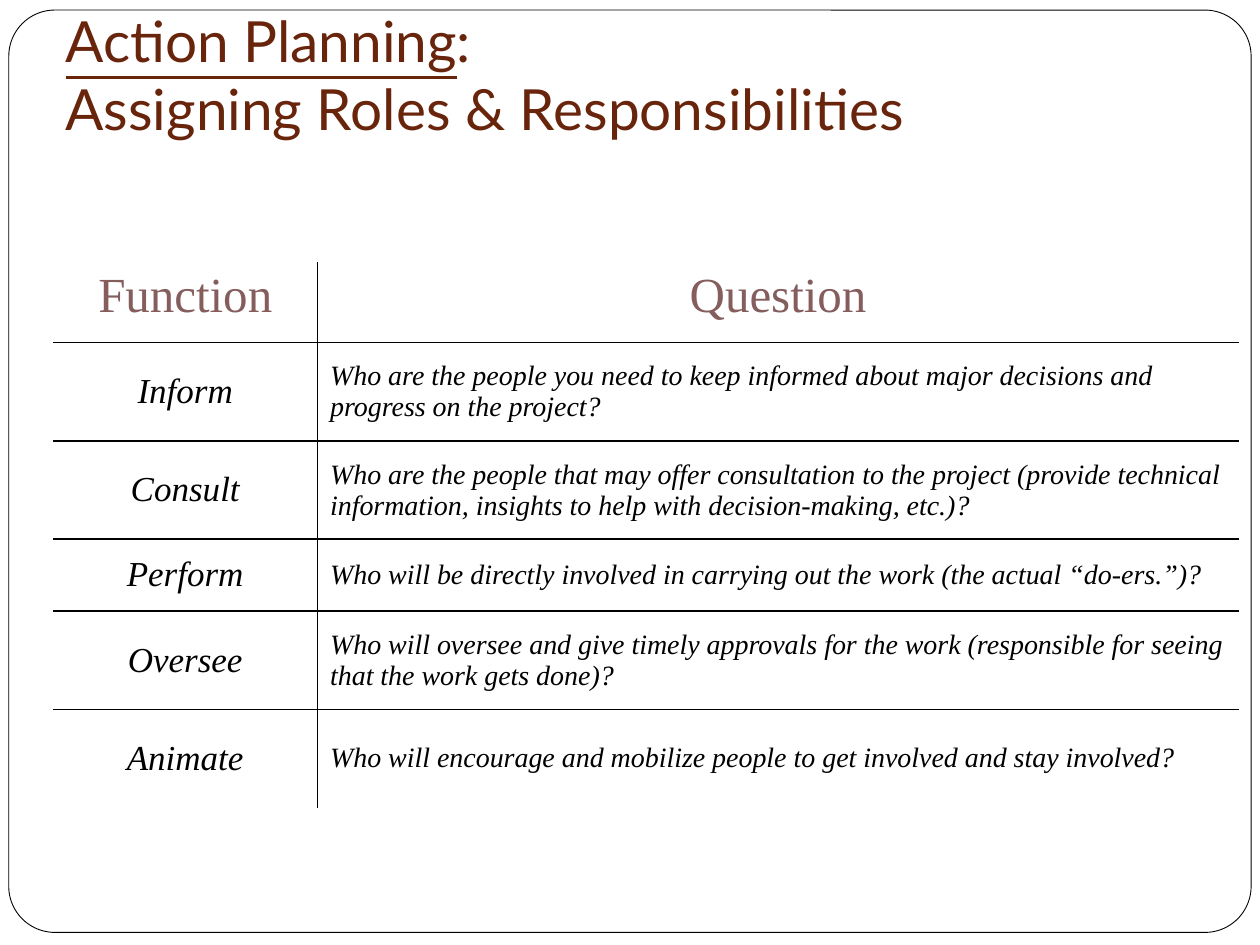
from lxml import etree
from pptx import Presentation
from pptx import util as u
from pptx.dml.color import RGBColor
from pptx.enum import shapes, text
from pptx.oxml import parse_xml
from pptx.oxml.ns import nsdecls, qn

BLACK = RGBColor(0x00, 0x00, 0x00)
WHITE = RGBColor(0xFF, 0xFF, 0xFF)
BROWN = RGBColor(0x69, 0x24, 0x0C)
MAUVE = RGBColor(0x85, 0x5D, 0x5D)
SERIF = "Times New Roman"
PLAIN_TABLE_STYLE = "{2D5ABB26-0587-4C30-8999-92F81FD0307C}"

COLUMN_WIDTHS = (2.1, 7.31)
ROW_HEIGHTS = (0.64, 0.78, 0.78, 0.57, 0.78, 0.78)
HEADINGS = ("Function", "Question")
ROLES = (
    ("Inform", "Who are the people you need to keep informed about major decisions "
               "and progress on the project?"),
    ("Consult", "Who are the people that may offer consultation to the project "
                "(provide technical information, insights to help with "
                "decision-making, etc.)?"),
    ("Perform", "Who will be directly involved in carrying out the work "
                "(the actual “do-ers.”)?"),
    ("Oversee", "Who will oversee and give timely approvals for the work "
                "(responsible for seeing that the work gets done)?"),
    ("Animate", "Who will encourage and mobilize people to get involved and stay involved?"),
)


def add_span(para, words, font=SERIF, size=16, color=BLACK, italic=False, underline=False):
    """Add a formatted run to a paragraph."""
    span = para.add_run()
    span.text = words
    span.font.name = font
    span.font.size = u.Pt(size)
    span.font.color.rgb = color
    span.font.bold = False
    span.font.italic = italic
    span.font.underline = underline


def add_frame(page):
    """Draw the rounded page frame behind everything else."""
    frame = page.shapes.add_shape(
        shapes.MSO_SHAPE.ROUNDED_RECTANGLE,
        u.Inches(0.07), u.Inches(0.08), u.Inches(9.86), u.Inches(7.32))
    frame.adjustments[0] = 0.05
    frame.shadow.inherit = False
    frame.fill.solid()
    frame.fill.fore_color.rgb = WHITE
    frame.line.color.rgb = BLACK
    frame.line.width = u.Pt(0.5)
    page.shapes.element.insert(2, frame.element)


def fill_title(page):
    """Place and write the two-line title."""
    title = page.shapes.title
    title.left, title.top = u.Inches(0.42), u.Inches(0.94)
    title.width, title.height = u.Inches(9.46), u.Inches(0.83)
    box = title.text_frame
    box.auto_size = text.MSO_AUTO_SIZE.NONE
    box.word_wrap = True
    box.vertical_anchor = text.MSO_ANCHOR.BOTTOM
    box.margin_bottom = u.Inches(0.64)
    para = box.paragraphs[0]
    para.alignment = text.PP_ALIGN.LEFT
    style = dict(font="Lato", size=32.4, color=BROWN)
    add_span(para, "Action Planning", underline=True, **style)
    add_span(para, ":", **style)
    para.add_line_break()
    add_span(para, "Assigning Roles & Responsibilities", **style)


def add_border(cell, side):
    """Draw a thin black border on one side (L, R, T or B) of a cell."""
    border = parse_xml(f'<a:ln{side} {nsdecls("a")} w="{u.Pt(1)}"/>')
    fill = etree.SubElement(border, qn("a:solidFill"))
    etree.SubElement(fill, qn("a:srgbClr"), val=str(BLACK))
    cell._tc.get_or_add_tcPr().append(border)


def fill_cell(cell, words, sides, centered=True, anchor=text.MSO_ANCHOR.MIDDLE, **style):
    """Write one table cell and draw its inner borders."""
    for side in sides:
        add_border(cell, side)
    cell.fill.background()
    cell.vertical_anchor = anchor
    para = cell.text_frame.paragraphs[0]
    para.alignment = text.PP_ALIGN.CENTER if centered else text.PP_ALIGN.LEFT
    add_span(para, words, **style)


def add_roles_table(page):
    """Build the table of functions and questions."""
    rows = (HEADINGS,) + ROLES
    table = page.shapes.add_table(
        len(rows), len(HEADINGS), u.Inches(0.42), u.Inches(2.08),
        u.Inches(sum(COLUMN_WIDTHS)), u.Inches(sum(ROW_HEIGHTS))).table
    table.horz_banding = False
    table._tbl.tblPr.find(qn("a:tableStyleId")).text = PLAIN_TABLE_STYLE
    for column, width in zip(table.columns, COLUMN_WIDTHS):
        column.width = u.Inches(width)
    for row, height in zip(table.rows, ROW_HEIGHTS):
        row.height = u.Inches(height)
    last = len(rows) - 1
    for r, words in enumerate(rows):
        across = ("T" if r > 0 else "") + ("B" if r < last else "")
        function, question = table.cell(r, 0), table.cell(r, 1)
        if r == 0:
            heading = dict(size=28, color=MAUVE, anchor=text.MSO_ANCHOR.TOP)
            fill_cell(function, words[0], "R" + across, **heading)
            fill_cell(question, words[1], "L" + across, **heading)
        else:
            fill_cell(function, words[0], "R" + across, size=20, italic=True)
            fill_cell(question, words[1], "L" + across, centered=False, italic=True)


def main():
    """Build the slide and save the deck."""
    deck = Presentation()
    deck.slide_width, deck.slide_height = u.Inches(10), u.Inches(7.5)
    page = deck.slides.add_slide(deck.slide_layouts[5])
    add_frame(page)
    fill_title(page)
    add_roles_table(page)
    deck.save("out.pptx")


if __name__ == "__main__":
    main()
